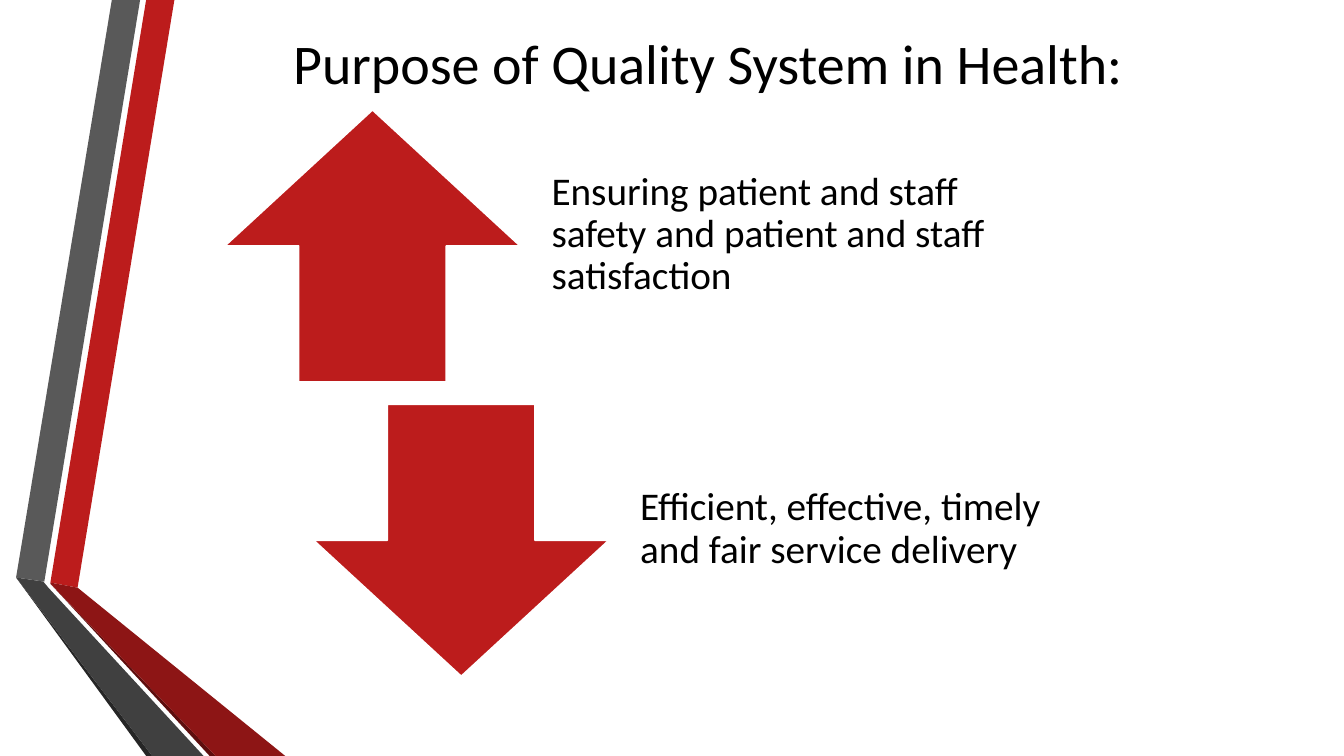
from pptx import Presentation
from pptx.dml.color import RGBColor
from pptx.enum.shapes import MSO_SHAPE
from pptx.enum.text import MSO_ANCHOR
from pptx.util import Inches, Pt

RED = RGBColor(0xBC, 0x1C, 0x1C)
DARK_RED = RGBColor(0x8D, 0x15, 0x15)
DEEP_RED = RGBColor(0x5E, 0x0E, 0x0E)
GRAY = RGBColor(0x59, 0x59, 0x59)
DARK_GRAY = RGBColor(0x40, 0x40, 0x40)
DEEP_GRAY = RGBColor(0x26, 0x26, 0x26)
BLACK = RGBColor(0, 0, 0)
WHITE = RGBColor(0xFF, 0xFF, 0xFF)

TITLE = "Purpose of Quality System in Health:"
PURPOSES = [
    (MSO_SHAPE.UP_ARROW,
     "Ensuring patient and staff safety and patient and staff satisfaction"),
    (MSO_SHAPE.DOWN_ARROW,
     "Efficient, effective, timely and fair service delivery"),
]
RIBBONS = [
    (RED, [(0.5, 5.78), (0.77, 5.83), (1.73, 0), (1.45, 0)]),
    (GRAY, [(1.39, 0), (1.11, 0), (0.16, 5.73), (0.44, 5.77)]),
    (DEEP_GRAY, [(0.16, 5.73), (1.45, 7.5), (1.51, 7.5)]),
    (DEEP_RED, [(0.5, 5.79), (2.08, 7.5), (2.14, 7.5)]),
    (DARK_RED, [(0.5, 5.79), (2.14, 7.5), (2.83, 7.5), (0.77, 5.83), (0.5, 5.78)]),
    (DARK_GRAY, [(2.02, 7.5), (0.48, 5.83), (0.43, 5.77), (0.16, 5.73), (1.51, 7.5)]),
]

ARROW_LEFT, ARROW_TOP = 2.23, 1.09
ARROW_WIDTH, ARROW_HEIGHT = 2.93, 2.7
STEP_X, STEP_Y = 0.88, 2.92
TEXT_OFFSET, TEXT_WIDTH = 3.02, 4.98


def add_ribbon(slide, color, points):
    corners = [(Inches(x), Inches(y)) for x, y in points]
    builder = slide.shapes.build_freeform(*corners[0], scale=1.0)
    builder.add_line_segments(corners[1:], close=True)
    shape = builder.convert_to_shape()
    shape.shadow.inherit = False
    shape.fill.solid()
    shape.fill.fore_color.rgb = color
    shape.line.fill.background()


def add_text(slide, box, text, size, anchor, insets, line_spacing=1.0):
    frame = slide.shapes.add_textbox(*map(Inches, box)).text_frame
    frame.word_wrap = True
    frame.vertical_anchor = anchor
    (frame.margin_left, frame.margin_top,
     frame.margin_right, frame.margin_bottom) = map(Inches, insets)
    paragraph = frame.paragraphs[0]
    paragraph.line_spacing = line_spacing
    run = paragraph.add_run()
    run.text = text
    run.font.size = Pt(size)
    run.font.name = "Calibri"
    run.font.color.rgb = BLACK


def add_arrow(slide, kind, left, top):
    shape = slide.shapes.add_shape(
        kind, Inches(left), Inches(top), Inches(ARROW_WIDTH), Inches(ARROW_HEIGHT))
    shape.shadow.inherit = False
    shape.fill.solid()
    shape.fill.fore_color.rgb = RED
    shape.line.color.rgb = WHITE
    shape.line.width = Pt(1.25)


def main():
    presentation = Presentation()
    presentation.slide_width = Inches(13.33)
    presentation.slide_height = Inches(7.5)
    slide = presentation.slides.add_slide(presentation.slide_layouts[6])

    for color, points in RIBBONS:
        add_ribbon(slide, color, points)

    add_text(slide, (2.81, 0, 9.77, 1), TITLE, 40, MSO_ANCHOR.BOTTOM,
             (0.1, 0.05, 0.1, 0.05))

    for index, (kind, text) in enumerate(PURPOSES):
        left = ARROW_LEFT + index * STEP_X
        top = ARROW_TOP + index * STEP_Y
        add_arrow(slide, kind, left, top)
        add_text(slide, (left + TEXT_OFFSET, top, TEXT_WIDTH, ARROW_HEIGHT), text,
                 28, MSO_ANCHOR.MIDDLE, (0.22, 0, 0.22, 0.22), 0.9)

    presentation.save("out.pptx")


if __name__ == "__main__":
    main()
